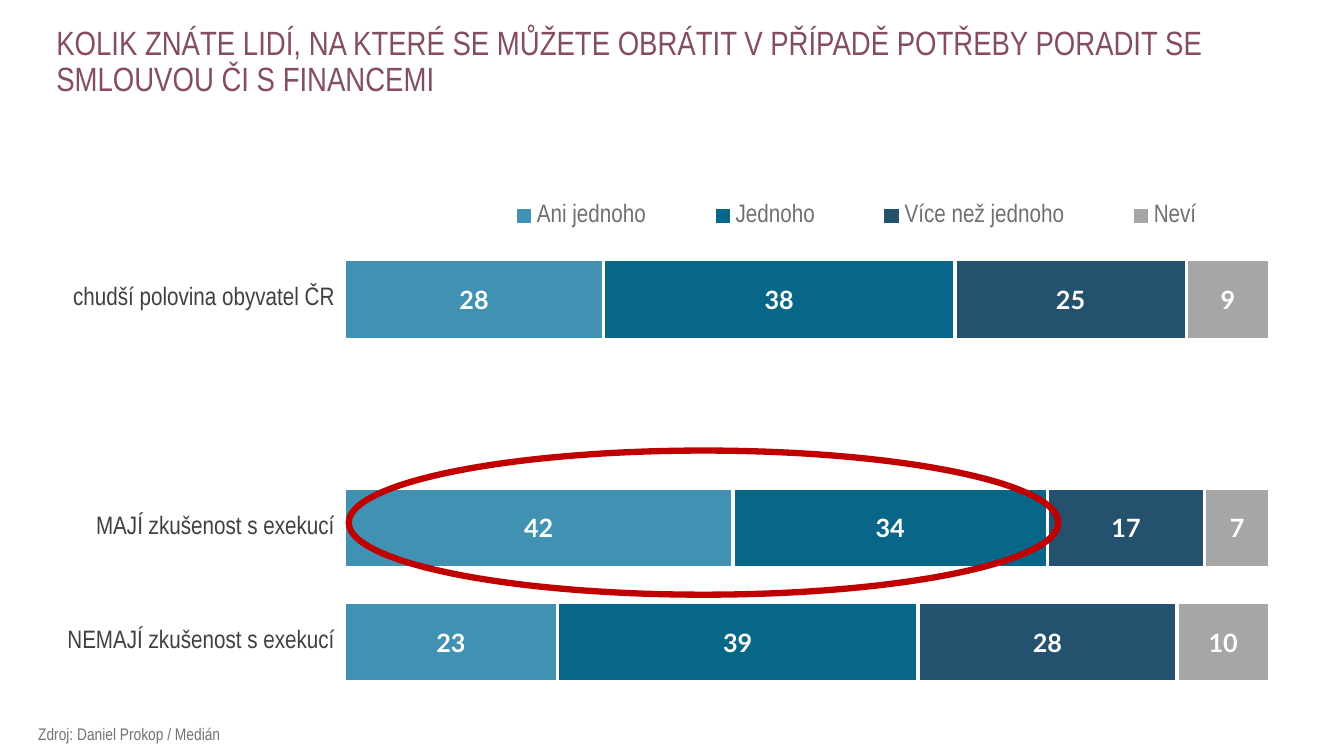
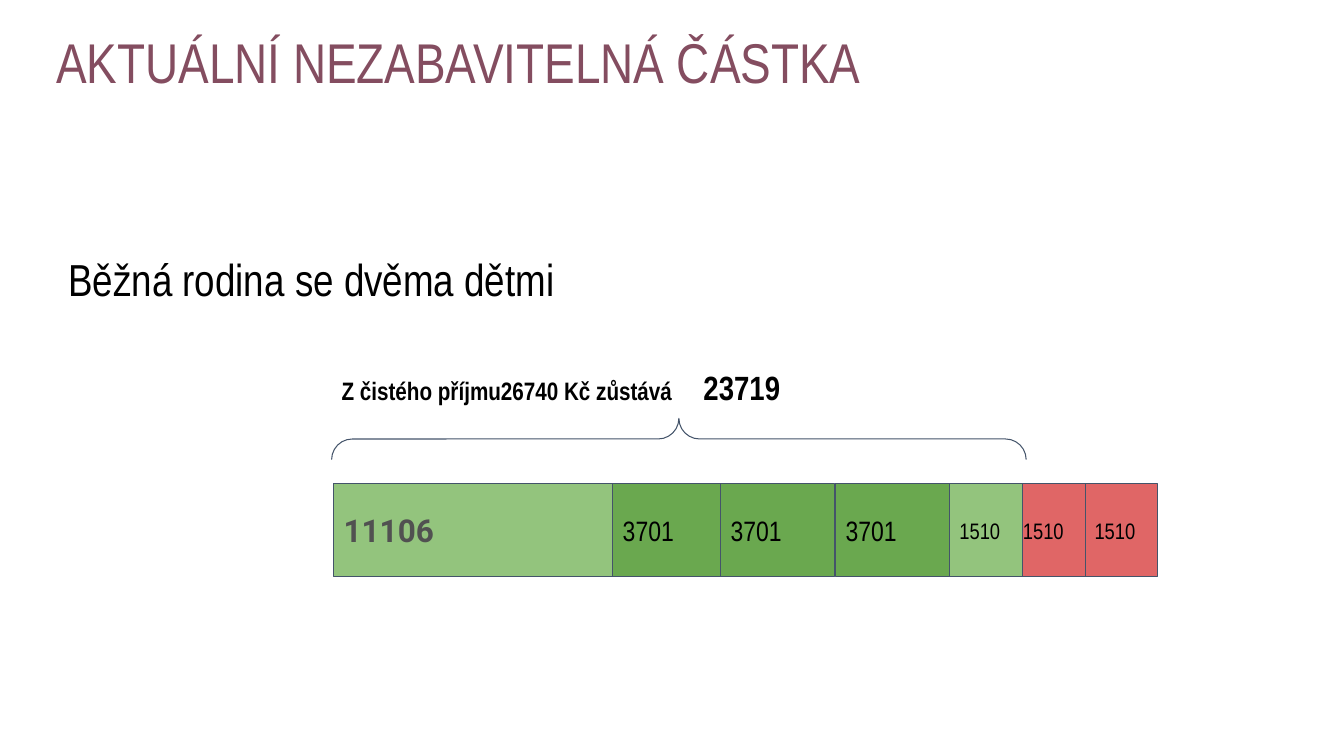
from dataclasses import dataclass
from typing import NamedTuple, Optional

from lxml import etree
from pptx import Presentation
from pptx.chart.data import CategoryChartData
from pptx.dml.color import RGBColor
from pptx.enum.chart import XL_CHART_TYPE as ChartType
from pptx.enum.chart import XL_LABEL_POSITION as LabelPosition
from pptx.enum.chart import XL_LEGEND_POSITION as LegendPosition
from pptx.enum.chart import XL_TICK_LABEL_POSITION as TickLabels
from pptx.enum.chart import XL_TICK_MARK as TickMark
from pptx.enum.shapes import MSO_SHAPE as Preset
from pptx.enum.text import MSO_ANCHOR as Anchor
from pptx.enum.text import PP_ALIGN as Align
from pptx.oxml.ns import qn
from pptx.util import Inches, Pt

COLUMNS, ROWS = 160, 90
UNIT = Inches(7.5) / ROWS


@dataclass(frozen=True)
class Theme:
    font: str = "Arial Narrow"
    label_font: str = "Lato"
    amount_font: str = "Roboto"
    title: str = "844D60"
    ink: str = "000000"
    white: str = "FFFFFF"
    category: str = "404040"
    legend: str = "6F6F6F"
    source: str = "767171"
    amount: str = "515151"
    outline: str = "44546A"
    highlight: str = "C00000"
    base_kept: str = "93C47D"
    person_kept: str = "6AA84F"
    seized: str = "E06666"
    small: float = 12
    note: float = 16
    body: float = 18
    share: float = 20
    base: float = 22.5
    heading: float = 24
    lead: float = 32
    big_heading: float = 40


THEME = Theme()


class Area(NamedTuple):
    column: float
    row: float
    columns: float
    rows: float

    def emu(self) -> tuple:
        return tuple(round(length * UNIT) for length in self)


class Answer(NamedTuple):
    name: str
    values: tuple
    color: str


class Part(NamedTuple):
    amount: str
    column: float
    columns: float
    fill: str
    size: float
    font: str = THEME.font
    color: str = THEME.ink
    bold: bool = False


GROUPS = ("chudší polovina obyvatel ČR", "", "MAJÍ zkušenost s exekucí", "NEMAJÍ zkušenost s exekucí")
ANSWERS = (
    Answer("Ani jednoho", (28, None, 42, 23), "4191B2"),
    Answer("Jednoho", (38, None, 34, 39), "086788"),
    Answer("Více než jednoho", (25, None, 17, 28), "24516E"),
    Answer("Neví", (9, None, 7, 10), "A6A6A6"),
)
PERSON_COLUMNS, THIRD_COLUMNS = 13.56, 8.64
PARTS = (
    Part("11106", 39.72, 34.2, THEME.base_kept, THEME.base, THEME.amount_font, THEME.amount, True),
    *(Part("3701", column, PERSON_COLUMNS, THEME.person_kept, THEME.share)
      for column in (72.96, 85.8, 99.48)),
    *(Part("1510", column, THIRD_COLUMNS, fill, THEME.note)
      for column, fill in ((129.12, THEME.seized), (120.6, THEME.seized), (113.04, THEME.base_kept))),
)


def rgb(color: str) -> RGBColor:
    return RGBColor.from_string(color)


def style_font(font, size: float, color: str, name: str = THEME.font, bold: bool = False) -> None:
    font.size, font.name, font.bold = Pt(size), name, bold
    font.color.rgb = rgb(color)


def write(holder, text: str, *, size: float, color: str = THEME.ink, font: str = THEME.font,
          bold: bool = False, anchor=Anchor.TOP, spacing: Optional[float] = None,
          inset: tuple = (0.1, 0.05)):
    frame = holder.text_frame
    frame.word_wrap = True
    frame.vertical_anchor = anchor
    frame.margin_left = frame.margin_right = Inches(inset[0])
    frame.margin_top = frame.margin_bottom = Inches(inset[1])
    paragraph = frame.paragraphs[0]
    paragraph.alignment = Align.LEFT
    if spacing:
        paragraph.line_spacing = spacing
    run = paragraph.add_run()
    run.text = text
    style_font(run.font, size, color, font, bold)
    return paragraph


def add_text(slide, area: Area, text: str, **text_format):
    return write(slide.shapes.add_textbox(*area.emu()), text, **text_format)


def add_title(slide, area: Area, text: str, size: float) -> None:
    add_text(slide, area, text, size=size, color=THEME.title, anchor=Anchor.MIDDLE, spacing=0.9)


def add_figure(slide, preset, area: Area, line: str, width: float, fill: Optional[str] = None):
    figure = slide.shapes.add_shape(preset, *area.emu())
    figure.shadow.inherit = False
    figure.line.color.rgb = rgb(line)
    figure.line.width = Pt(width)
    if fill:
        figure.fill.solid()
        figure.fill.fore_color.rgb = rgb(fill)
    else:
        figure.fill.background()
    return figure


def place(element, index: int, inner: bool, **shares: float) -> None:
    for old in element.findall(qn("c:layout")):
        element.remove(old)
    layout = etree.Element(qn("c:layout"))
    manual = etree.SubElement(layout, qn("c:manualLayout"))
    settings = {"layoutTarget": "inner"} if inner else {}
    settings.update(xMode="edge", yMode="edge", **shares)
    for tag, value in settings.items():
        etree.SubElement(manual, qn(f"c:{tag}")).set("val", str(value))
    element.insert(index, layout)


def add_answers_chart(slide, area: Area) -> None:
    data = CategoryChartData()
    data.categories = GROUPS
    for answer in ANSWERS:
        data.add_series(answer.name, answer.values)
    chart = slide.shapes.add_chart(ChartType.BAR_STACKED_100, *area.emu(), data).chart
    chart.has_title = False
    style_font(chart.font, THEME.body, THEME.ink)

    groups = chart.category_axis
    groups.reverse_order = True
    groups.major_tick_mark = groups.minor_tick_mark = TickMark.NONE
    groups.tick_label_position = TickLabels.LOW
    groups.format.line.fill.background()
    groups.has_major_gridlines = False
    style_font(groups.tick_labels.font, THEME.body, THEME.category)

    scale = chart.value_axis
    scale.minimum_scale, scale.maximum_scale, scale.major_unit = 0, 1, 0.2
    scale.has_major_gridlines = False
    scale.visible = False

    chart.has_legend = True
    chart.legend.position = LegendPosition.TOP
    chart.legend.include_in_layout = False
    style_font(chart.legend.font, THEME.body, THEME.legend)
    place(chart.legend._element, 1, False, x=0.34, y=0, w=0.65, h=0.08)

    plot = chart.plots[0]
    plot.gap_width, plot.overlap = 44, 100
    plot.vary_by_categories = False
    place(chart._chartSpace.chart.plotArea, 0, True, x=0.25, y=0.09, w=0.75, h=0.86)
    for series, answer in zip(plot.series, ANSWERS):
        series.format.fill.solid()
        series.format.fill.fore_color.rgb = rgb(answer.color)
        series.format.line.color.rgb = rgb(THEME.white)
        series.format.line.width = Pt(2.25)
        labels = series.data_labels
        labels.show_value = True
        labels.position = LabelPosition.CENTER
        style_font(labels.font, THEME.body, THEME.white, THEME.label_font, True)


def add_remaining_income(slide, area: Area) -> None:
    sentence = add_text(slide, area, "Z čistého příjmu26740 Kč zůstává", size=THEME.body,
                        bold=True, inset=(0.1, 0.1))
    stops = etree.SubElement(sentence._p.get_or_add_pPr(), qn("a:tabLst"))
    etree.SubElement(stops, qn("a:tab"), pos=str(Inches(3.59)), algn="l")
    remainder = sentence.add_run()
    remainder.text = "\t23719"
    style_font(remainder.font, THEME.heading, THEME.ink, bold=True)


def build_advice_slide(slide) -> None:
    add_title(slide, Area(5.52, 3.72, 148, 7.56),
              "KOLIK ZNÁTE LIDÍ, NA KTERÉ SE MŮŽETE OBRÁTIT V PŘÍPADĚ POTŘEBY PORADIT SE "
              "SMLOUVOU ČI S FINANCEMI", THEME.heading)
    add_answers_chart(slide, Area(4.32, 23.16, 147, 63.24))
    add_figure(slide, Preset.OVAL, Area(41.52, 53.64, 84.48, 17.16), THEME.highlight, 4.5)
    add_text(slide, Area(3.36, 85.56, 35.76, 3.6), "Zdroj: Daniel Prokop / Medián",
             size=THEME.small, color=THEME.source)


def build_income_slide(slide) -> None:
    add_text(slide, Area(6.96, 30.12, 99.84, 50.4), "Běžná rodina se dvěma dětmi",
             size=THEME.lead, spacing=0.9)
    for part in PARTS:
        block = add_figure(slide, Preset.RECTANGLE, Area(part.column, 57.6, part.columns, 11.04),
                           THEME.outline, 0.75, part.fill)
        write(block, part.amount, size=part.size, color=part.color, font=part.font,
              bold=part.bold, anchor=Anchor.MIDDLE, inset=(0.1, 0.1))
    brace = add_figure(slide, Preset.LEFT_BRACE, Area(78.36, 10.92, 4.92, 82.68), THEME.outline, 0.75)
    brace.rotation = 90
    brace.adjustments[0] = brace.adjustments[1] = 0.5
    add_remaining_income(slide, Area(39.48, 42.48, 56.52, 7.32))
    add_title(slide, Area(5.52, 0, 138, 15.48), "AKTUÁLNÍ NEZABAVITELNÁ ČÁSTKA", THEME.big_heading)


def main() -> None:
    deck = Presentation()
    deck.slide_width, deck.slide_height = round(COLUMNS * UNIT), round(ROWS * UNIT)
    blank = deck.slide_layouts[6]
    for build in (build_advice_slide, build_income_slide):
        build(deck.slides.add_slide(blank))
    deck.save("out.pptx")


if __name__ == "__main__":
    main()
